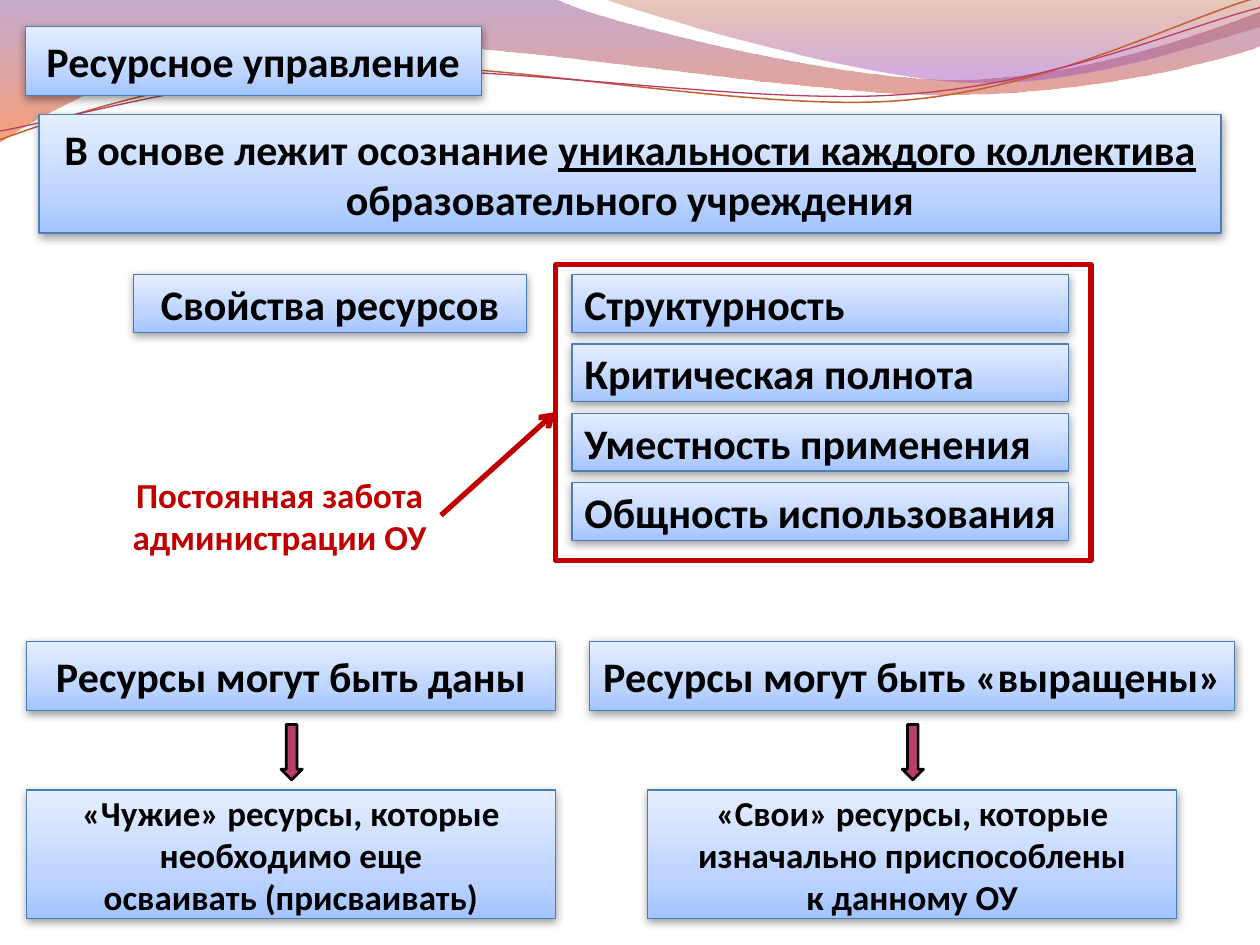
from lxml import etree
from pptx import Presentation
from pptx.dml.color import RGBColor
from pptx.enum.shapes import MSO_CONNECTOR, MSO_SHAPE
from pptx.enum.text import MSO_ANCHOR, MSO_AUTO_SIZE, PP_ALIGN
from pptx.oxml.ns import qn
from pptx.util import Inches, Pt

RECT, ARROW = MSO_SHAPE.RECTANGLE, MSO_SHAPE.DOWN_ARROW
LEFT, CENTER = PP_ALIGN.LEFT, PP_ALIGN.CENTER
MIDDLE, TOP = MSO_ANCHOR.MIDDLE, MSO_ANCHOR.TOP
FONT = "Calibri"
BLACK = RGBColor(0, 0, 0)
RED = RGBColor(0xC0, 0, 0)
BLUE = RGBColor(0x4A, 0x7E, 0xBB)
ROSE = RGBColor(0xB8, 0x3D, 0x68)
RUST = RGBColor(0xC4, 0x5F, 0x30)
# Gradient stops: position %, colour, opacity %
BOX_FILL = [(0, RGBColor(0xA3, 0xC4, 0xFF), 100),
            (35, RGBColor(0xBF, 0xD5, 0xFF), 100),
            (100, RGBColor(0xE5, 0xEE, 0xFF), 100)]
WIDE_FILL = [(0, RGBColor(0x83, 0x45, 0x91), 45),
             (100, RGBColor(0xF3, 0x53, 0x07), 55)]
SIDE_FILL = [(0, RGBColor(0xB7, 0x49, 0x15), 30),
             (80, RGBColor(0xA1, 0x4B, 0xB4), 45)]

# Outlines: a start point, then one point for a line, three for a curve
WIDE = [(0, 0), [(4.4, -0.01)],
        [(4.76, 0.17), (6.64, 0.63), (7.58, 0.63)],
        [(8.53, 0.63), (9.58, 0.26), (10, 0.09)], [(10.01, 0.36)],
        [(9.83, 0.44), (8.7, 0.76), (7.46, 0.75)],
        [(6.22, 0.75), (3.82, 0.28), (2.57, 0.34)],
        [(1.29, 0.36), (0.46, 0.83), (-0.01, 1.13)]]
SIDE = [(4.79, -0.01),
        [(5.09, 0.11), (6.82, 0.62), (7.69, 0.65)],
        [(8.56, 0.69), (9.61, 0.32), (10, 0.21)], [(10, 0)]]
UPPER = [(0, 1.11),
         [(0.48, 0.93), (1.58, 0.57), (2.77, 0.52)],
         [(3.95, 0.47), (5.93, 0.89), (7.13, 0.8)],
         [(8.33, 0.71), (9.38, 0.15), (9.98, -0.02)]]
LOWER = [(0, 1.04),
         [(0.47, 0.96), (1.64, 0.61), (2.83, 0.56)],
         [(4.03, 0.51), (5.97, 0.84), (7.17, 0.75)],
         [(8.36, 0.67), (9.41, 0.21), (10, 0.06)]]


def add(parent, tag, **attrs):
    node = etree.SubElement(parent, qn(tag))
    for key, value in attrs.items():
        node.set(key, str(value))
    return node


def add_color(parent, color, alpha):
    node = add(parent, "a:srgbClr", val=color)
    if alpha < 100:
        add(node, "a:alpha", val=alpha * 1000)


def set_grad(shape, stops, angle):
    shape.fill.gradient()
    grad = shape.element.spPr.find(qn("a:gradFill"))
    for child in list(grad):
        grad.remove(child)
    group = add(grad, "a:gsLst")
    for pos, color, alpha in stops:
        add_color(add(group, "a:gs", pos=pos * 1000), color, alpha)
    add(grad, "a:lin", ang=angle * 60000, scaled=0)


def set_line(shape, color, width):
    shape.line.color.rgb = color
    shape.line.width = Pt(width)


def set_text(shape, text, size, color=BLACK, align=CENTER, anchor=MIDDLE):
    frame = shape.text_frame
    frame.text = text
    frame.word_wrap = True
    frame.auto_size = MSO_AUTO_SIZE.NONE
    frame.vertical_anchor = anchor
    para = frame.paragraphs[0]
    para.alignment = align
    for run in para.runs:
        set_font(run, size, color)


def set_font(run, size, color=BLACK):
    font = run.font
    font.name, font.size, font.bold = FONT, Pt(size), True
    font.color.rgb = color


def style_box(shape):
    """Give a blue gradient, a thin line and a soft shadow below."""
    set_grad(shape, BOX_FILL, 270)
    set_line(shape, BLUE, 0.75)
    shape.shadow.inherit = False
    effects = shape.element.spPr.find(qn("a:effectLst"))
    shade = add(effects, "a:outerShdw", blurRad=Pt(5), dist=Pt(1.6),
                dir=90 * 60000, rotWithShape=0)
    add_color(shade, BLACK, 38)


def add_shape(slide, kind, *area):
    shape = slide.shapes.add_shape(kind, *map(Inches, area))
    shape.shadow.inherit = False
    return shape


def add_box(slide, area, text, size=24, align=CENTER):
    box = add_shape(slide, RECT, *area)
    style_box(box)
    set_text(box, text, size, align=align)
    return box


def bend(shape, parts):
    """Join each three line steps of a curved part into one cubic curve."""
    steps = list(shape.element.spPr.iter(qn("a:lnTo")))
    for part in parts:
        first, *rest = steps[:len(part)]
        steps = steps[len(part):]
        if rest:
            first.tag = qn("a:cubicBezTo")
        for step in rest:
            first.append(step[0])
            step.getparent().remove(step)


def add_wave(slide, outline, close):
    start, *parts = outline
    pen = slide.shapes.build_freeform(*map(Inches, start))
    pen.add_line_segments([(Inches(x), Inches(y))
                           for part in parts for x, y in part], close=close)
    wave = pen.convert_to_shape()
    bend(wave, parts)
    wave.shadow.inherit = False
    return wave


def add_waves(slide):
    for outline, stops in ((WIDE, WIDE_FILL), (SIDE, SIDE_FILL)):
        wave = add_wave(slide, outline, True)
        set_grad(wave, stops, 90)
        wave.line.fill.background()
    for outline, color, width in ((UPPER, RUST, 0.85), (LOWER, ROSE, 0.75)):
        wave = add_wave(slide, outline, False)
        wave.fill.background()
        set_line(wave, color, width)


def add_title(slide, text):
    title = slide.shapes.title
    title.left, title.top, title.width, title.height = map(
        Inches, (0.2, 0.21, 3.62, 0.55))
    style_box(title)
    set_text(title, text, 24)
    slide.shapes.element.append(title.element)  # in front of the waves


def add_thesis(slide):
    box = add_box(slide, (0.31, 0.91, 9.38, 0.94), "В основе лежит осознание ")
    para = box.text_frame.paragraphs[0]
    for text, under in (("уникальности каждого коллектива", True),
                        (" образовательного учреждения", False)):
        run = para.add_run()
        run.text = text
        set_font(run, 24)
        run.font.underline = under


def add_traits(slide):
    add_box(slide, (1.06, 2.18, 3.12, 0.46), "Свойства ресурсов")
    traits = ("Структурность", "Критическая полнота",
              "Уместность применения", "Общность использования")
    for i, text in enumerate(traits):
        add_box(slide, (4.54, 2.18 + 0.55 * i, 3.94, 0.46), text, align=LEFT)
    frame = add_shape(slide, RECT, 4.41, 2.1, 4.25, 2.35)
    frame.fill.background()
    set_line(frame, RED, 3)


def add_care(slide):
    note = slide.shapes.add_textbox(*map(Inches, (0.94, 3.71, 2.56, 0.77)))
    set_text(note, "Постоянная забота\vадминистрации ОУ", 20, RED, anchor=TOP)
    note.text_frame.word_wrap = False
    link = slide.shapes.add_connector(
        MSO_CONNECTOR.STRAIGHT, *map(Inches, (3.5, 4.09, 4.41, 3.27)))
    set_line(link, RED, 3)
    props = link.element.spPr
    add(props.find(qn("a:ln")), "a:tailEnd", type="arrow")
    add(props, "a:effectLst")


def add_branch(slide, mid, width, head, body):
    """Put a heading, an arrow and a text box on one vertical axis."""
    add_box(slide, (mid - width / 2, 5.09, width, 0.55), head)
    add_box(slide, (mid - 2.1, 6.27, 4.2, 1.02), body, size=20)
    arrow = add_shape(slide, ARROW, mid - 0.08, 5.75, 0.17, 0.44)
    arrow.fill.solid()
    arrow.fill.fore_color.rgb = ROSE
    set_line(arrow, BLACK, 1.5)


def main():
    deck = Presentation()
    deck.slide_width, deck.slide_height = Inches(10), Inches(7.5)
    slide = deck.slides.add_slide(deck.slide_layouts[5])
    add_waves(slide)
    add_title(slide, "Ресурсное управление")
    add_thesis(slide)
    add_traits(slide)
    add_care(slide)
    add_branch(slide, 2.31, 4.2, "Ресурсы могут быть даны",
               "«Чужие» ресурсы, которые необходимо еще\vосваивать (присваивать)")
    add_branch(slide, 7.24, 5.12, "Ресурсы могут быть «выращены»",
               "«Свои» ресурсы, которые изначально приспособлены\vк данному ОУ")
    deck.save("out.pptx")


if __name__ == "__main__":
    main()
